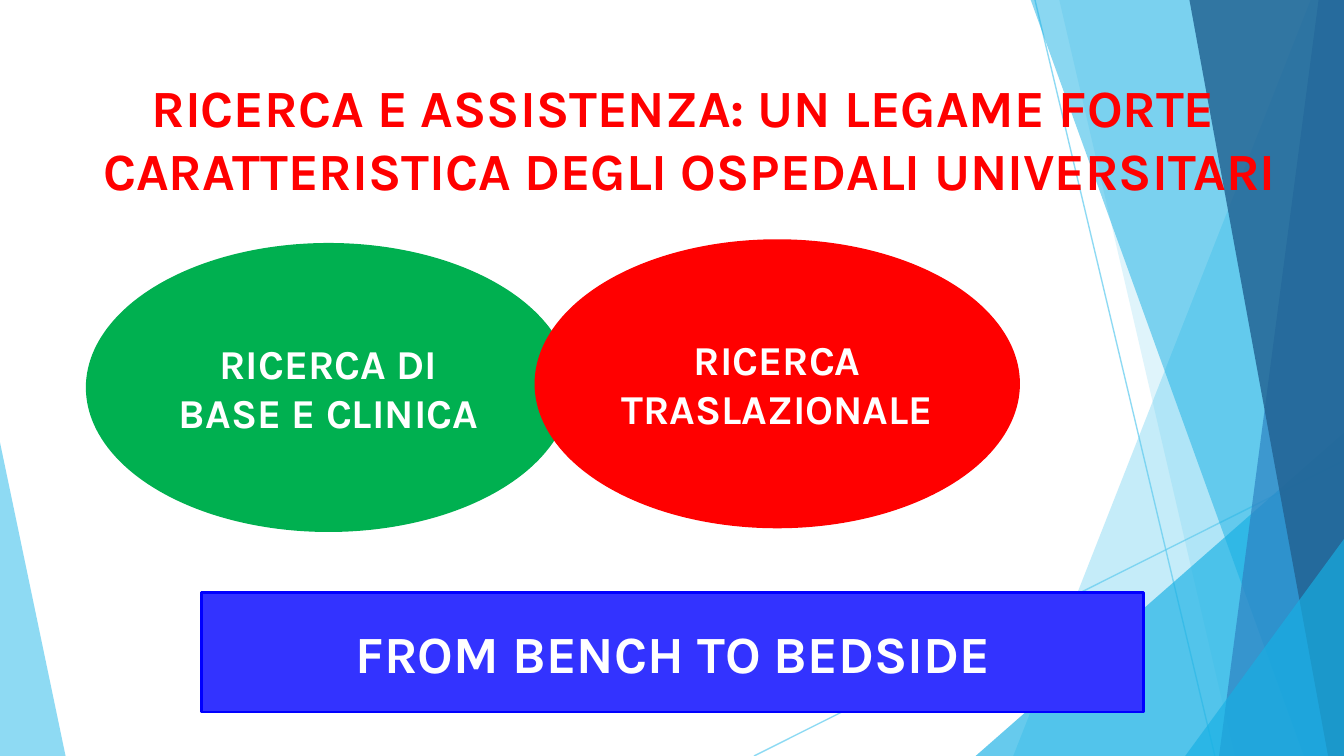
"""Build the slide on the link between research and hospital care."""
import pptx
import pptx.util
import pptx.dml.color
import pptx.enum.shapes
import pptx.enum.text
import pptx.oxml
import pptx.oxml.ns
from pptx.util import Cm

THEME = {
    "font": "Karla", "title_size": 28, "oval_size": 22, "banner_size": 28,
    "red": "FF0000", "green": "00B050", "white": "FFFFFF",
    "banner": "3333FF", "banner_edge": "0000FF",
    "sky": "5FCBEF", "cyan": "17B0E4", "blue": "2E83C3", "navy": "226292",
}
W, H = 25.4, 14.29


def set_alpha(sp, percent):
    color = sp.element.spPr.find(".//" + pptx.oxml.ns.qn("a:srgbClr"))
    alpha = pptx.oxml.parse_xml(
        f'<a:alpha {pptx.oxml.ns.nsdecls("a")} val="{percent * 1000}"/>')
    color.append(alpha)


def format_text(tf, size, color):
    for p in tf.paragraphs:
        p.alignment = pptx.enum.text.PP_ALIGN.CENTER
        for r in p.runs:
            r.font.name = THEME["font"]
            r.font.size = pptx.util.Pt(size)
            r.font.bold = True
            r.font.color.rgb = pptx.dml.color.RGBColor.from_string(THEME[color])


prs = pptx.Presentation()
prs.slide_width, prs.slide_height = Cm(W), Cm(H)
s = prs.slides.add_slide(prs.slide_layouts[5])

rays = [(14.25, H, 25.43, 8.69), (19.56, 0, 22.96, H)]
for ray in rays:
    line = s.shapes.add_connector(
        pptx.enum.shapes.MSO_CONNECTOR.STRAIGHT, *[Cm(v) for v in ray])
    line.line.color.rgb = pptx.dml.color.RGBColor.from_string(THEME["sky"])
    line.line.width = pptx.util.Pt(0.75)
    set_alpha(line, 70)
    line.element.spPr.append(pptx.oxml.parse_xml(
        f'<a:effectLst {pptx.oxml.ns.nsdecls("a")}/>'))

facets = [
    ("sky", 70, [(0, 8.36), (1.24, H), (0, H)]),
    ("sky", 36, [(24.77, 0), (19.15, H), (W, H), (W, 0)]),
    ("sky", 20, [(20.02, 0), (23.34, H), (W, H), (W, 0)]),
    ("cyan", 66, [(18.44, H), (W, 8.18), (W, H)]),
    ("cyan", 50, [(19.48, 0), (24.64, H), (W, H), (W, 0)]),
    ("blue", 70, [(24.92, 0), (23.04, H), (W, H), (W, 0)]),
    ("navy", 82, [(22.48, 0), (25.1, H), (W, H), (W, 0)]),
    ("cyan", 66, [(22.4, H), (W, 10.19), (W, H)]),
]
for color, opacity, corners in facets:
    points = [(Cm(x), Cm(y)) for x, y in corners]
    builder = s.shapes.build_freeform(*points[0])
    builder.add_line_segments(points[1:], close=True)
    sp = builder.convert_to_shape()
    sp.shadow.inherit = False
    sp.fill.solid()
    sp.fill.fore_color.rgb = pptx.dml.color.RGBColor.from_string(THEME[color])
    sp.line.fill.background()
    set_alpha(sp, opacity)

OVAL = pptx.enum.shapes.MSO_SHAPE.OVAL
RECTANGLE = pptx.enum.shapes.MSO_SHAPE.RECTANGLE
blocks = [
    (OVAL, (1.65, 4.62, 9.12, 5.41), "green", "green", "oval_size",
     "RICERCA DI BASE E CLINICA"),
    (OVAL, (10.13, 4.55, 9.12, 5.41), "red", "red", "oval_size",
     "RICERCA TRASLAZIONALE"),
    (RECTANGLE, (3.81, 11.2, 17.81, 2.26), "banner", "banner_edge", "banner_size",
     "FROM BENCH TO BEDSIDE"),
]
for kind, box, fill, edge, size, text in blocks:
    sp = s.shapes.add_shape(kind, *[Cm(v) for v in box])
    sp.shadow.inherit = False
    sp.fill.solid()
    sp.fill.fore_color.rgb = pptx.dml.color.RGBColor.from_string(THEME[fill])
    sp.line.color.rgb = pptx.dml.color.RGBColor.from_string(THEME[edge])
    sp.line.width = pptx.util.Pt(1.5)
    tf = sp.text_frame
    tf.text = text
    tf.word_wrap = True
    tf.vertical_anchor = pptx.enum.text.MSO_ANCHOR.MIDDLE
    format_text(tf, THEME[size], "white")

title = s.shapes.title
title.left, title.top, title.width, title.height = Cm(1.65), Cm(1.3), Cm(22.76), Cm(2.64)
tf = title.text_frame
tf.text = ("RICERCA E ASSISTENZA: UN LEGAME FORTE \n"
           "CARATTERISTICA DEGLI OSPEDALI UNIVERSITARI ")
tf.word_wrap = False
tf.auto_size = pptx.enum.text.MSO_AUTO_SIZE.SHAPE_TO_FIT_TEXT
tf.vertical_anchor = pptx.enum.text.MSO_ANCHOR.TOP
format_text(tf, THEME["title_size"], "red")
s.shapes.element.append(title.element)

prs.save("out.pptx")
